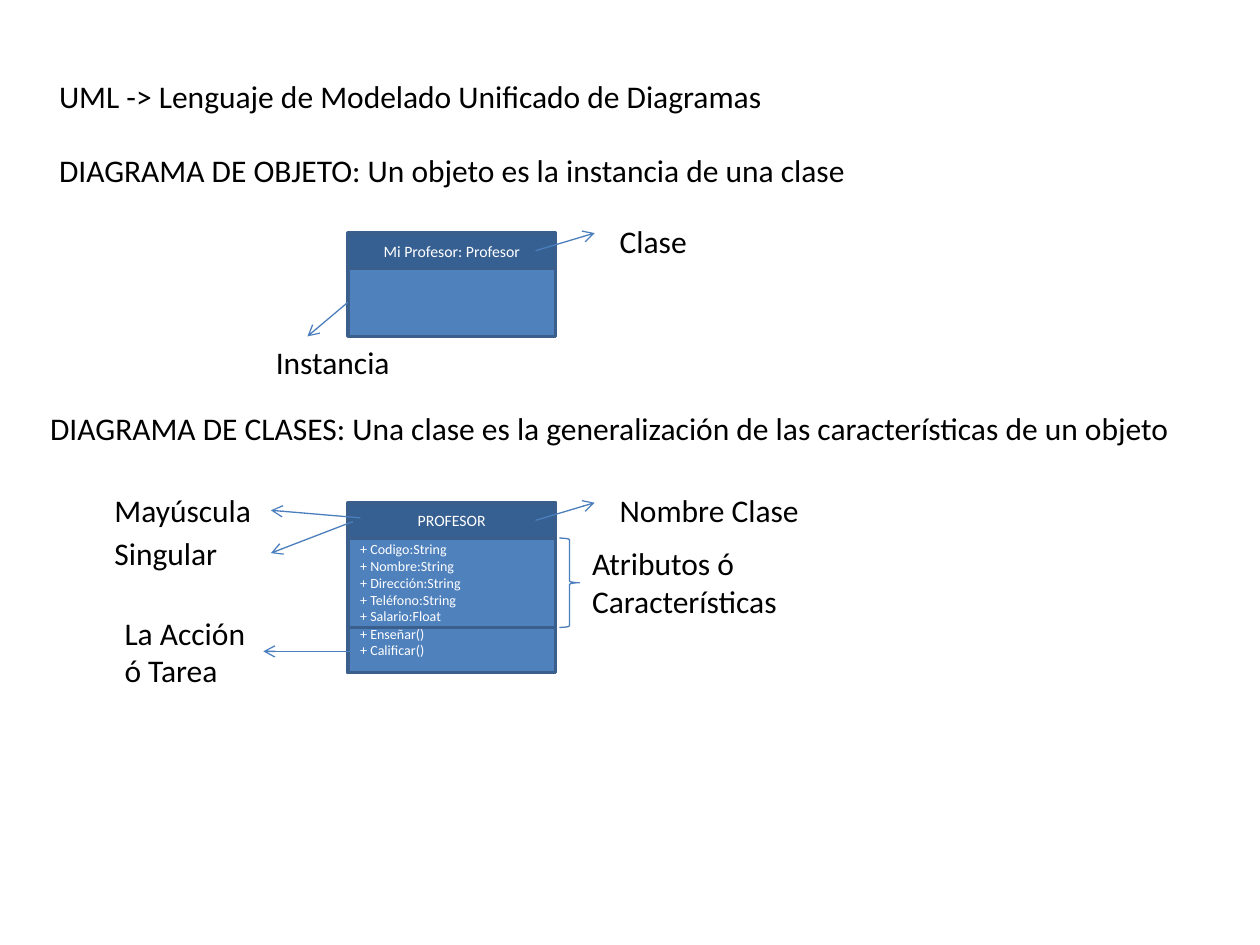
from copy import deepcopy
from dataclasses import dataclass

from lxml import etree
from pptx import Presentation
from pptx import util as u
from pptx.dml.color import RGBColor
from pptx.enum import shapes, text
from pptx.oxml.ns import qn


@dataclass(frozen=True)
class Theme:
    font: str = "Calibri"
    ink: str = "000000"
    light: str = "FFFFFF"
    header: str = "376092"
    body: str = "4F81BD"
    border: str = "3A5F8C"
    arrow: str = "4B7EBC"
    label_size: int = 18
    name_size: int = 9
    member_size: int = 8
    border_width: float = 2
    arrow_width: float = 0.75


THEME = Theme()
LABEL_HEIGHT = 0.4
HEADER_HEIGHT = 0.28


def inches(*lengths):
    return [u.Inches(length) for length in lengths]


def write(frame, content, size=THEME.label_size, color=THEME.ink,
          align=text.PP_ALIGN.LEFT, anchor=text.MSO_ANCHOR.TOP):
    frame.vertical_anchor = anchor
    paragraph = frame.paragraphs[0]
    paragraph.text = content
    paragraph.alignment = align
    for run in paragraph.runs:
        run.font.name = THEME.font
        run.font.size = u.Pt(size)
        run.font.color.rgb = RGBColor.from_string(color)
    for line_break in paragraph._p.findall(qn("a:br")):
        line_break.append(deepcopy(paragraph.runs[0]._r.rPr))


def add_label(slide, content, left, top, width, height=LABEL_HEIGHT):
    label = slide.shapes.add_textbox(*inches(left, top, width, height))
    label.text_frame.word_wrap = False
    label.text_frame.auto_size = text.MSO_AUTO_SIZE.SHAPE_TO_FIT_TEXT
    write(label.text_frame, content)


def set_line(line, color, width):
    line.color.rgb = RGBColor.from_string(color)
    line.width = u.Pt(width)


def add_compartment(slide, box, fill, content="", **text_format):
    shape = slide.shapes.add_shape(shapes.MSO_SHAPE.RECTANGLE, *inches(*box))
    shape.shadow.inherit = False
    shape.fill.solid()
    shape.fill.fore_color.rgb = RGBColor.from_string(fill)
    set_line(shape.line, THEME.border, THEME.border_width)
    if content:
        write(shape.text_frame, content, color=THEME.light,
              anchor=text.MSO_ANCHOR.MIDDLE, **text_format)
    return shape


def add_name(slide, content, left, top, width):
    add_compartment(slide, (left, top, width, HEADER_HEIGHT), THEME.header, content,
                    size=THEME.name_size, align=text.PP_ALIGN.CENTER)


def add_arrow(slide, start, end):
    arrow = slide.shapes.add_connector(
        shapes.MSO_CONNECTOR.STRAIGHT, *inches(*start, *end))
    set_line(arrow.line, THEME.arrow, THEME.arrow_width)
    etree.SubElement(arrow.line._get_or_add_ln(), qn("a:tailEnd"), type="arrow")
    etree.SubElement(arrow._element.spPr, qn("a:effectLst"))


def add_name_callout(slide, content, right, top, width):
    add_arrow(slide, (right - 0.16, top + 0.14), (right + 0.31, top))
    add_label(slide, content, right + 0.41, top - 0.14, width)


def add_object_diagram(slide, left, top, width):
    body_top = top + HEADER_HEIGHT
    body_height = 0.54
    bottom = body_top + body_height
    add_name(slide, "Mi Profesor: Profesor", left, top, width)
    add_compartment(slide, (left, body_top, width, body_height), THEME.body)
    add_name_callout(slide, "Clase", left + width, top, 0.74)
    add_arrow(slide, (left, top + 0.55), (left - 0.32, bottom))
    add_label(slide, "Instancia", left - 0.67, bottom, 1.11)


def add_class_diagram(slide, left, top, width):
    right = left + width
    attributes_top = top + HEADER_HEIGHT
    attributes_height = 0.71
    methods_top = attributes_top + attributes_height
    action_level = methods_top + 0.19

    add_name(slide, "PROFESOR", left, top, width)
    attributes = "\n".join([
        "+ Codigo:String", "+ Nombre:String", "+ Dirección:String",
        "+ Teléfono:String", "+ Salario:Float"])
    add_compartment(slide, (left, attributes_top, width, attributes_height),
                    THEME.body, attributes, size=THEME.member_size)
    methods = add_compartment(slide, (left, methods_top, width, 0.36), THEME.body,
                              "+ Enseñar()\n+ Calificar()", size=THEME.member_size)
    methods.text_frame.margin_top = 0
    methods.text_frame.margin_bottom = u.Inches(0.13)

    add_name_callout(slide, "Nombre Clase", right, top, 1.64)
    add_arrow(slide, (left + 0.1, top + 0.12), (left - 0.61, top + 0.06))
    add_arrow(slide, (left + 0.04, top + 0.15), (left - 0.61, top + 0.4))
    add_label(slide, "Mayúscula", left - 1.95, top - 0.14, 1.3)
    add_label(slide, "Singular", left - 1.95, top + 0.2, 1.03)

    add_arrow(slide, (left + 0.04, action_level), (left - 0.67, action_level))
    add_label(slide, "La Acción\nó Tarea", left - 1.87, action_level - 0.35, 1.17, 0.71)

    brace = slide.shapes.add_shape(
        shapes.MSO_SHAPE.RIGHT_BRACE,
        *inches(right + 0.03, attributes_top, 0.16, attributes_height))
    brace.shadow.inherit = False
    brace.fill.background()
    set_line(brace.line, THEME.arrow, THEME.arrow_width)
    add_label(slide, "Atributos ó\nCaracterísticas", right + 0.19, attributes_top,
              1.68, attributes_height)


def main():
    presentation = Presentation()
    presentation.slide_width, presentation.slide_height = inches(10, 7.5)
    slide = presentation.slides.add_slide(presentation.slide_layouts[6])
    add_label(slide, "UML -> Lenguaje de Modelado Unificado de Diagramas",
              0.37, 0.56, 5.85)
    add_label(slide, "DIAGRAMA DE OBJETO: Un objeto es la instancia de una clase",
              0.37, 1.15, 6.51)
    add_object_diagram(slide, left=2.76, top=1.85, width=1.65)
    add_label(slide, "DIAGRAMA DE CLASES: Una clase es la generalización "
              "de las características de un objeto", 0.3, 3.2, 9.13)
    add_class_diagram(slide, left=2.76, top=3.99, width=1.65)
    presentation.save("out.pptx")


if __name__ == "__main__":
    main()
